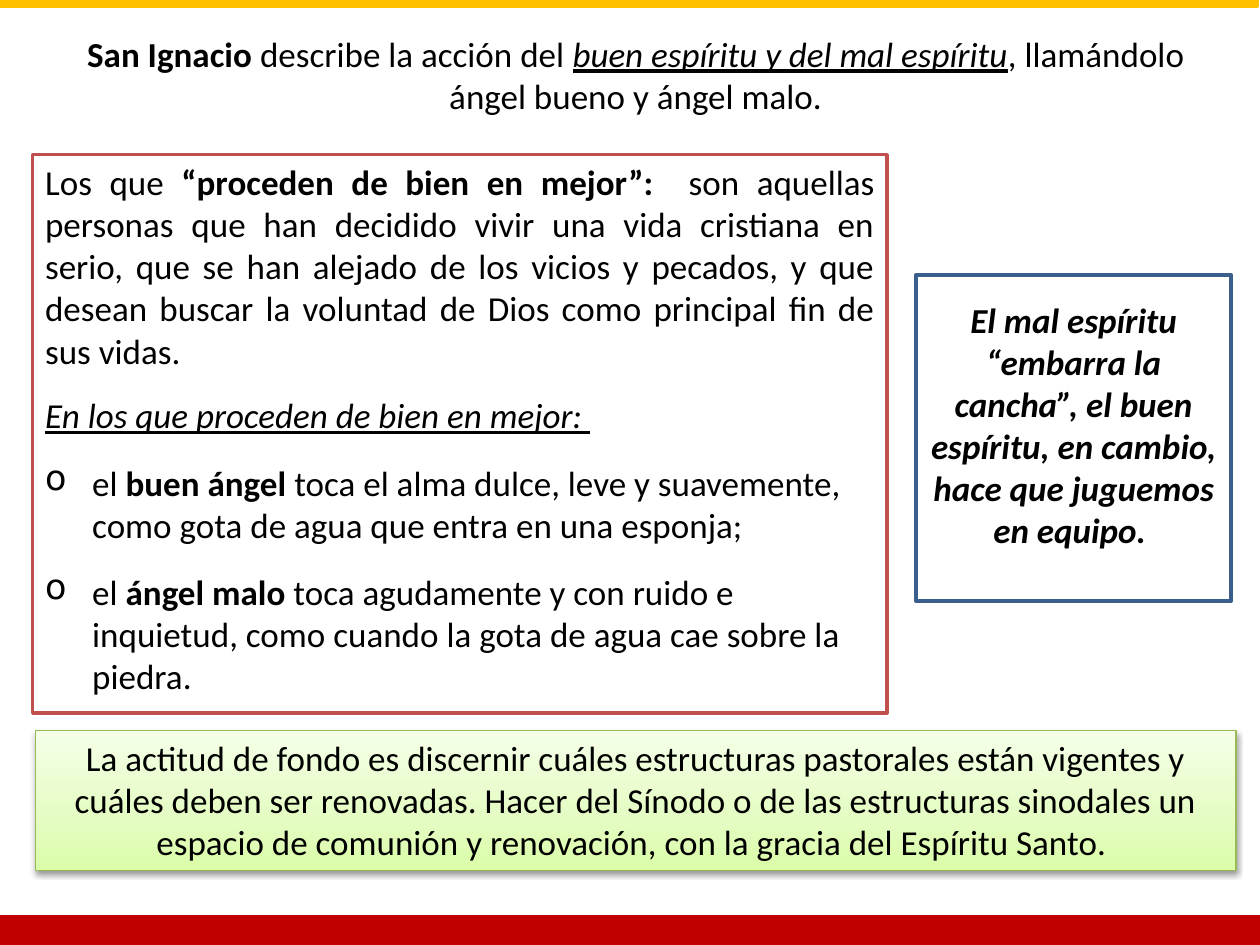
from copy import deepcopy

from lxml.etree import SubElement
from pptx import Presentation
from pptx.dml.color import RGBColor
from pptx.enum.shapes import MSO_SHAPE
from pptx.enum.text import MSO_ANCHOR, MSO_AUTO_SIZE, PP_ALIGN
from pptx.oxml.ns import qn
from pptx.util import Cm, Pt

COLORS = {
    "gold": "FFC000",
    "red": "C00000",
    "text": "000000",
    "white": "FFFFFF",
    "coral": "C0504D",
    "blue": "3A5F8C",
    "green_line": "98B955",
}
GREEN_STOPS = [(0, "DAFDA7"), (0.35, "E4FCC2"), (1, "F5FFE7")]
BULLET_INDENT = Cm(0.95)


def rgb(name):
    return RGBColor.from_string(COLORS[name])


def add_box(page, left, top, width, height, line, fill=None, line_width=2):
    box = page.shapes.add_shape(
        MSO_SHAPE.RECTANGLE, Cm(left), Cm(top), Cm(width), Cm(height))
    box.shadow.inherit = False
    if fill:
        box.fill.solid()
        box.fill.fore_color.rgb = rgb(fill)
    else:
        box.fill.background()
    box.line.color.rgb = rgb(line)
    box.line.width = Pt(line_width)
    return box


def set_gradient(box, stops, angle):
    box.fill.gradient()
    box.fill.gradient_angle = angle
    stop_list = box._element.spPr.find(".//" + qn("a:gsLst"))
    while len(stop_list) < len(stops):
        stop_list.append(deepcopy(stop_list[0]))
    for stop, (position, color) in zip(box.fill.gradient_stops, stops):
        stop.position = position
        stop.color.rgb = RGBColor.from_string(color)


def add_shadow(box):
    effects = box._element.spPr.find(qn("a:effectLst"))
    shadow = SubElement(effects, qn("a:outerShdw"), blurRad=str(Pt(3.1)),
                        dist=str(Pt(1.6)), dir="5400000", rotWithShape="0")
    color = SubElement(shadow, qn("a:srgbClr"), val=COLORS["text"])
    SubElement(color, qn("a:alpha"), val="38000")


def prepare_frame(shape):
    frame = shape.text_frame
    frame.word_wrap = True
    frame.auto_size = MSO_AUTO_SIZE.NONE
    frame.vertical_anchor = MSO_ANCHOR.TOP
    return frame


def write_para(para, spans, align, space_before=0):
    """Fill a paragraph from (text, style) pairs; style holds b, i and u."""
    para.alignment = align
    para.space_before = Pt(space_before)
    for text, style in spans:
        span = para.add_run()
        span.text = text
        font = span.font
        font.name = "Calibri"
        font.size = Pt(20)
        font.color.rgb = rgb("text")
        font.bold = "b" in style
        font.italic = "i" in style
        font.underline = "u" in style


def add_bullet(para):
    properties = para._p.get_or_add_pPr()
    properties.set("marL", str(BULLET_INDENT))
    properties.set("indent", str(-BULLET_INDENT))
    SubElement(properties, qn("a:buChar"), char="o")


def add_title(page):
    title = page.shapes.title
    title.left, title.top = Cm(0.71), Cm(0.53)
    title.width, title.height = Cm(24.21), Cm(1.96)
    write_para(prepare_frame(title).paragraphs[0], [
        ("San Ignacio ", "b"),
        ("describe la acción del ", ""),
        ("buen espíritu y del mal espíritu", "iu"),
        (", llamándolo ángel bueno y ángel malo.", ""),
    ], PP_ALIGN.CENTER)


def add_conclusion(page):
    box = add_box(page, 0.71, 14.73, 24.21, 2.82, "green_line", line_width=0.75)
    set_gradient(box, GREEN_STOPS, 90)
    add_shadow(box)
    write_para(prepare_frame(box).paragraphs[0], [
        ("La actitud de fondo es discernir cuáles estructuras pastorales están "
         "vigentes y cuáles deben ser renovadas. Hacer del Sínodo o de las "
         "estructuras sinodales un espacio de comunión y renovación, con la "
         "gracia del Espíritu Santo. ", ""),
    ], PP_ALIGN.CENTER)


def add_explanation(page):
    box = add_box(page, 0.66, 3.12, 17.22, 11.25, "coral", "white")
    frame = prepare_frame(box)
    write_para(frame.paragraphs[0], [
        ("Los que ", ""),
        ("“proceden de bien en mejor”:  ", "b"),
        ("son aquellas personas que han decidido vivir una vida cristiana en "
         "serio, que se han alejado de los vicios y pecados, y que desean buscar "
         "la voluntad de Dios como principal fin de sus vidas. ", ""),
    ], PP_ALIGN.JUSTIFY)
    write_para(frame.add_paragraph(), [
        ("En los que proceden de bien en mejor: ", "iu"),
    ], PP_ALIGN.LEFT, 13)
    angels = [
        ("buen ángel ", "toca el alma dulce, leve y suavemente, como gota de "
                        "agua que entra en una esponja;"),
        ("ángel malo ", "toca agudamente y con ruido e inquietud, como cuando "
                        "la gota de agua cae sobre la piedra."),
    ]
    for angel, action in angels:
        para = frame.add_paragraph()
        write_para(para, [("el ", ""), (angel, "b"), (action, "")],
                   PP_ALIGN.LEFT, 14.5)
        add_bullet(para)


def add_quote(page):
    quote = page.shapes.add_textbox(Cm(18.47), Cm(5.89), Cm(6.35), Cm(5.38))
    write_para(prepare_frame(quote).paragraphs[0], [
        ("El mal espíritu “embarra la cancha”, el buen espíritu, en cambio, "
         "hace que juguemos en equipo. ", "bi"),
    ], PP_ALIGN.CENTER)
    add_box(page, 18.47, 5.54, 6.35, 6.58, "blue")


def main():
    deck = Presentation()
    deck.slide_width, deck.slide_height = Cm(25.4), Cm(19.05)
    page = deck.slides.add_slide(deck.slide_layouts.get_by_name("Title Only"))
    add_box(page, -0.05, 0, 25.4, 0.13, "gold", "gold")
    add_box(page, 0, 18.49, 25.4, 0.56, "red", "red")
    add_title(page)
    add_conclusion(page)
    add_explanation(page)
    add_quote(page)
    deck.save("out.pptx")


if __name__ == "__main__":
    main()
